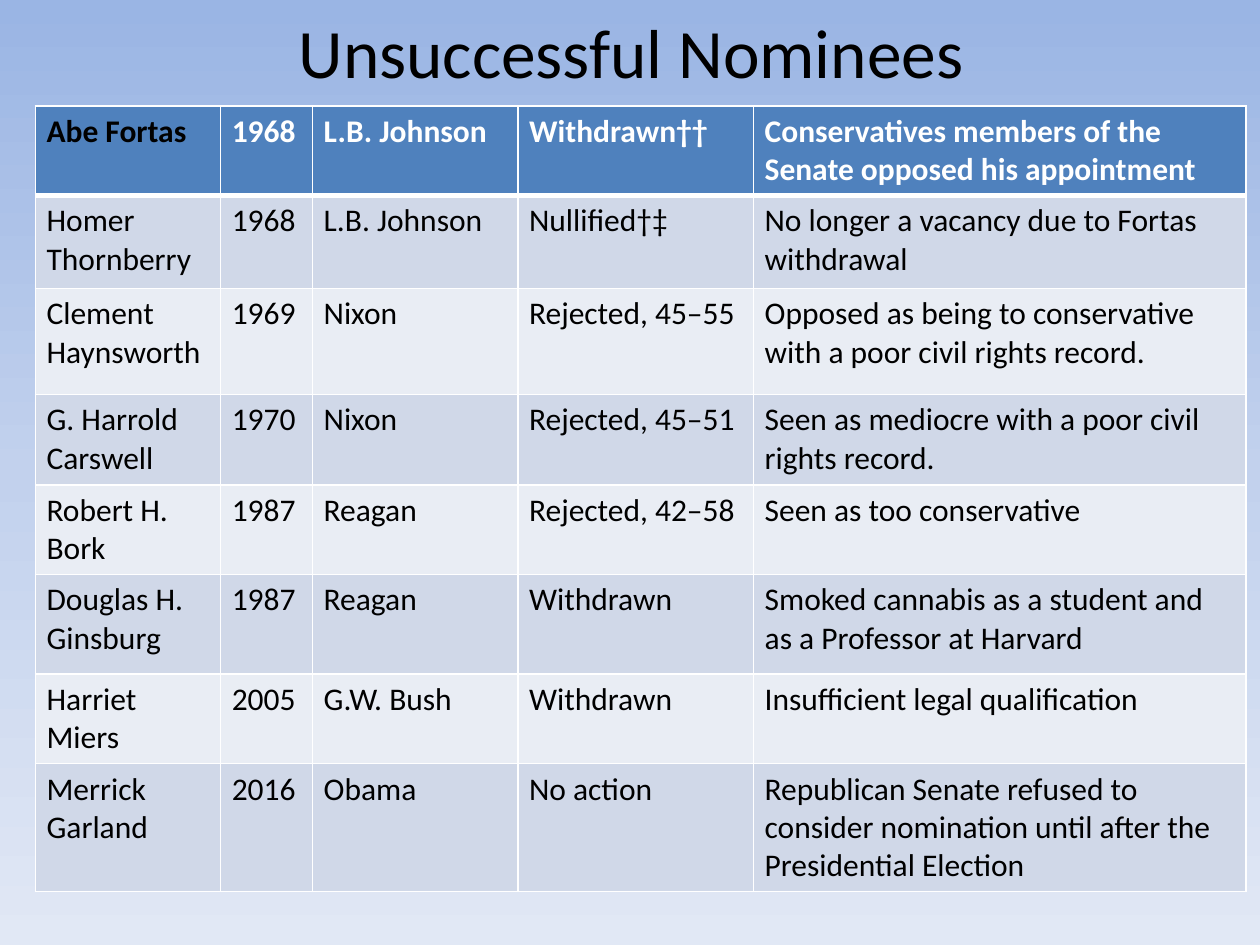
from copy import deepcopy

from lxml import etree
from pptx import Presentation
from pptx.dml.color import RGBColor
from pptx.enum.text import MSO_ANCHOR, PP_ALIGN
from pptx.oxml.ns import qn
from pptx.util import Inches, Pt

CENTER = PP_ALIGN.CENTER
MIDDLE = MSO_ANCHOR.MIDDLE
TITLE_ONLY = 5
FONT = "Calibri"
COLORS = {
    "sky_top": "9AB5E4",
    "sky_middle": "C2D1ED",
    "sky_bottom": "E1E8F5",
    "header": "4F81BD",
    "band_dark": "D0D8E8",
    "band_light": "E9EDF4",
    "text": "000000",
    "white": "FFFFFF",
}
COLUMN_WIDTHS = [1.47, 0.73, 1.63, 1.87, 3.91]
ROW_HEIGHTS = [0.7, 0.74, 0.84, 0.72, 0.71, 0.79, 0.71, 1]
NOMINEES = [
    ("Abe Fortas", "1968", "L.B. Johnson", "Withdrawn††",
     "Conservatives members of the Senate opposed his appointment"),
    ("Homer Thornberry", "1968", "L.B. Johnson", "Nullified†‡",
     "No longer a vacancy due to Fortas withdrawal"),
    ("Clement Haynsworth", "1969", "Nixon", "Rejected, 45–55",
     "Opposed as being to conservative with a poor civil rights record."),
    ("G. Harrold Carswell", "1970", "Nixon", "Rejected, 45–51",
     "Seen as mediocre with a poor civil rights record."),
    ("Robert H. Bork", "1987", "Reagan", "Rejected, 42–58",
     "Seen as too conservative"),
    ("Douglas H. Ginsburg", "1987", "Reagan", "Withdrawn",
     "Smoked cannabis as a student and as a Professor at Harvard"),
    ("Harriet Miers", "2005", "G.W. Bush", "Withdrawn",
     "Insufficient legal qualification"),
    ("Merrick Garland", "2016", "Obama", "No action",
     "Republican Senate refused to consider nomination until after the "
     "Presidential Election"),
]


def rgb(name):
    return RGBColor.from_string(COLORS[name])


def add_run(paragraph, text, size, color, bold=False):
    run = paragraph.add_run()
    run.text = text
    run.font.name = FONT
    run.font.size = Pt(size)
    run.font.bold = bold
    run.font.color.rgb = rgb(color)


def paint_background(slide):
    fill = slide.background.fill
    fill.gradient()
    fill.gradient_angle = 270  # counter-clockwise, so top to bottom
    stop_list = next(slide.element.iter(qn("a:gsLst")))
    stop_list.insert(1, deepcopy(stop_list[0]))
    sky = ("sky_top", "sky_middle", "sky_bottom")
    for index, (stop, color) in enumerate(zip(fill.gradient_stops, sky)):
        stop.position = index / 2
        stop.color.rgb = rgb(color)


def place_title(slide, left, top, width, height):
    title = slide.shapes.title
    title.left, title.top, title.width, title.height = left, top, width, height
    frame = title.text_frame
    frame.vertical_anchor = MIDDLE
    heading = frame.paragraphs[0]
    heading.alignment = CENTER
    add_run(heading, "Unsuccessful Nominees", 39.6, "text")


def set_borders(cell, widths):
    """Draw white borders; widths maps the sides L, R, T, B, in that order, to points."""
    properties = cell._tc.get_or_add_tcPr()
    for side, points in widths.items():
        line = etree.SubElement(properties, qn(f"a:ln{side}"), w=str(Pt(points)))
        solid = etree.SubElement(line, qn("a:solidFill"))
        etree.SubElement(solid, qn("a:srgbClr"), val=COLORS["white"])


def add_nominee_table(slide, left, top, width, height):
    table = slide.shapes.add_table(
        len(NOMINEES), len(COLUMN_WIDTHS), left, top, width, height).table
    for column, column_width in zip(table.columns, COLUMN_WIDTHS):
        column.width = Inches(column_width)
    for row, row_height in zip(table.rows, ROW_HEIGHTS):
        row.height = Inches(row_height)

    for r, nominee in enumerate(NOMINEES):
        is_header = r == 0
        band = "band_dark" if r % 2 else "band_light"
        borders = {"L": 1, "R": 1, "T": 3 if r == 1 else 1, "B": 3 if is_header else 1}
        for c, entry in enumerate(nominee):
            cell = table.cell(r, c)
            set_borders(cell, borders)
            cell.fill.solid()
            cell.fill.fore_color.rgb = rgb("header" if is_header else band)
            cell.margin_left = cell.margin_right = Inches(0.09)
            cell.margin_top = cell.margin_bottom = Inches(0.05)
            color = "white" if is_header and c > 0 else "text"
            add_run(cell.text_frame.paragraphs[0], entry, 18, color, is_header)


def main():
    deck = Presentation()
    deck.slide_width, deck.slide_height = Inches(10), Inches(7.5)
    slide = deck.slides.add_slide(deck.slide_layouts[TITLE_ONLY])
    paint_background(slide)
    place_title(slide, Inches(0.51), Inches(0.05), Inches(9), Inches(0.71))
    add_nominee_table(slide, Inches(0.28), Inches(0.84),
                      Inches(sum(COLUMN_WIDTHS)), Inches(sum(ROW_HEIGHTS)))
    deck.save("out.pptx")


if __name__ == "__main__":
    main()
